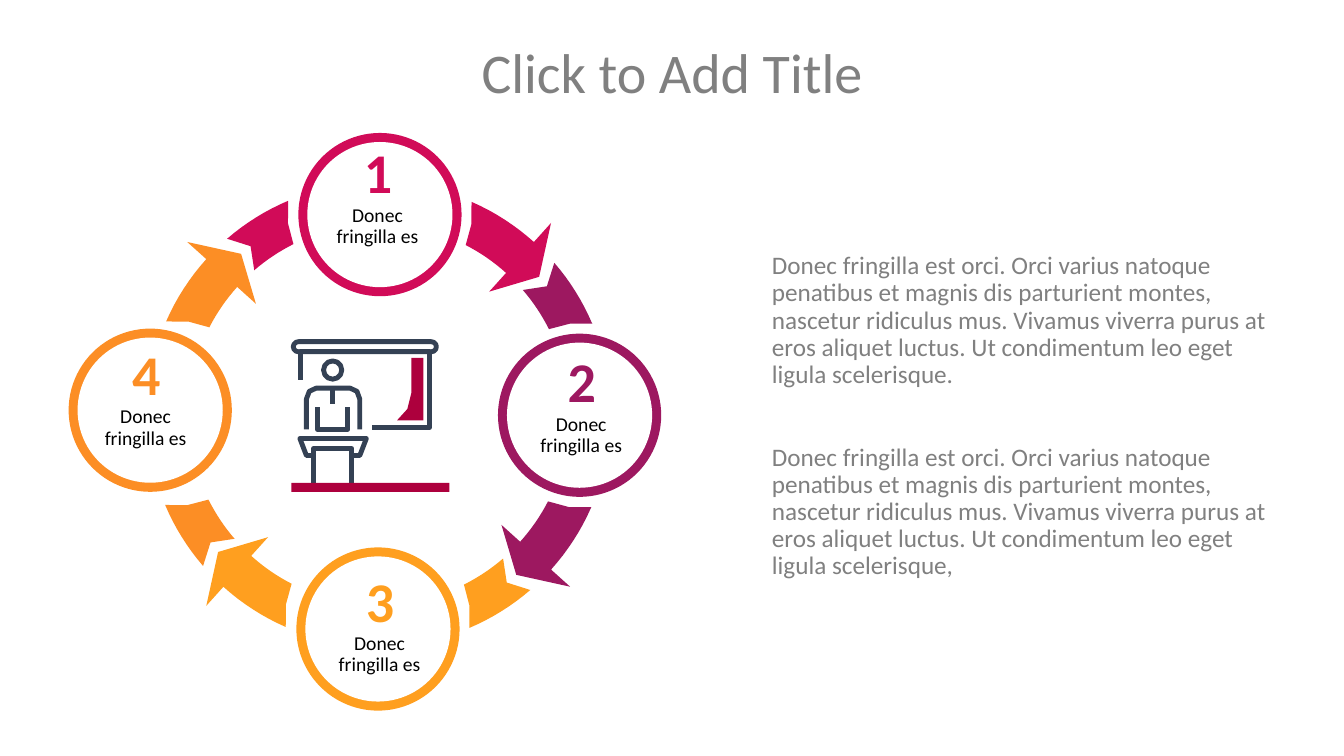
from dataclasses import dataclass
from math import cos, radians, sin
from typing import Optional

from lxml.etree import SubElement
from pptx import Presentation
from pptx.dml.color import RGBColor
from pptx.enum.shapes import MSO_CONNECTOR as Connector, MSO_SHAPE as Preset
from pptx.enum.text import MSO_ANCHOR as Anchor, PP_ALIGN as Align
from pptx.oxml.ns import qn
from pptx.util import Pt

Point = tuple[float, float]


@dataclass(frozen=True)
class Theme:
    font: str = "Calibri"
    grey: str = "808080"
    black: str = "000000"
    white: str = "FFFFFF"
    ink: str = "344154"
    accent: str = "AD003D"
    heading_size: float = 40
    body_size: float = 18
    label_size: float = 14
    icon_line: float = 3.5
    tight: float = 0.9


@dataclass(frozen=True)
class Box:
    left: float
    top: float
    width: float
    height: float

    def lengths(self) -> tuple[Pt, ...]:
        return Pt(self.left), Pt(self.top), Pt(self.width), Pt(self.height)


@dataclass(frozen=True)
class Step:
    color: str
    ring: Point
    caption: Point


@dataclass(frozen=True)
class Band:
    center: Point = (270.5, 296)
    outer: float = 165.7
    middle: float = 151
    inner: float = 136
    barb: float = 33

    def at(self, radius: float, bearing: float) -> Point:
        angle = radians(bearing)
        return self.center[0] + radius * sin(angle), self.center[1] - radius * cos(angle)

    def arc(self, radius: float, start: float, end: float, pieces: int = 8) -> list[Point]:
        return [self.at(radius, start + (end - start) * index / pieces) for index in range(pieces + 1)]

    def head(self, turn: float) -> list[Point]:
        base = turn + 42
        return [*self.arc(self.outer, turn + 23.6, base), self.at(self.middle + self.barb, base),
                self.at(self.middle, turn + 49.4), self.at(self.middle - self.barb, base),
                *self.arc(self.inner, base, turn + 27.2), self.at(self.middle, turn + 26)]

    def tail(self, turn: float) -> list[Point]:
        start = turn + 49.2
        return [*self.arc(self.outer, start, turn + 67), self.at(self.middle, turn + 64.6),
                *self.arc(self.inner, turn + 63.4, start), self.at(self.middle, turn + 52.7)]


THEME = Theme()
BAND = Band()
RING_SIZE, DISC_SIZE = 116.6, 103.7
STEP_LABEL = "Donec fringilla es"
BODY = (
    "Donec fringilla est orci. Orci varius natoque penatibus et magnis dis parturient montes, "
    "nascetur ridiculus mus. Vivamus viverra purus at eros aliquet luctus. "
    "Ut condimentum leo eget ligula scelerisque"
)
STEPS = [
    Step("D10B58", (213.1, 95), (220.3, 95)),
    Step("9D1860", (355.7, 238.3), (365.8, 244.1)),
    Step("FF9F1F", (211.7, 391), (221.8, 401)),
    Step("FC8E25", (49, 234.7), (54.7, 239)),
]
VEST = [(226.8, 290.9), (226.8, 306.7), (248.4, 306.7), (248.4, 290.9)]
SHOULDERS = [(218.9, 306.7), (218.9, 285), (221, 279.5), (226, 277.2),
             (250, 277.2), (255, 279.5), (257, 285), (257, 306.7)]
LECTERN_TOP = [(223.9, 325.4), (218.9, 325.4), (214.2, 313.2), (261.7, 313.2), (257, 325.4), (251.3, 325.4)]
LECTERN_BODY = [(251.3, 347.8), (251.3, 320.4), (223.9, 320.4), (223.9, 347.8)]
BOARD = [(214.6, 271.4), (214.6, 251.3), (306.7, 251.3), (306.7, 305.3), (265.7, 305.3)]
CURTAIN = [(302.4, 255.6), (293.8, 255.6), (293.8, 281), (291, 292.2), (283.7, 300.2), (302.4, 300.2)]


def paint(shape, fill: Optional[str] = None, line: Optional[str] = None) -> None:
    shape.shadow.inherit = False
    if fill:
        shape.fill.solid()
        shape.fill.fore_color.rgb = RGBColor.from_string(fill)
    else:
        shape.fill.background()
    if line:
        shape.line.color.rgb = RGBColor.from_string(line)
        shape.line.width = Pt(THEME.icon_line)
    else:
        shape.line.fill.background()


def draw_outline(shapes, outline: list[Point], fill: Optional[str] = None, line: Optional[str] = None) -> None:
    points = [(Pt(x), Pt(y)) for x, y in outline]
    builder = shapes.build_freeform(*points[0])
    builder.add_line_segments(points[1:], close=fill is not None)
    paint(builder.convert_to_shape(), fill, line)


def draw_preset(shapes, preset: Preset, box: Box, fill: Optional[str] = None, line: Optional[str] = None):
    shape = shapes.add_shape(preset, *box.lengths())
    paint(shape, fill, line)
    return shape


def format_paragraph(paragraph, size: float, color: str, align: Align, spacing: float, bold: bool = False) -> None:
    paragraph.alignment = align
    paragraph.line_spacing = spacing
    for run in paragraph.runs:
        run.font.name, run.font.size, run.font.bold = THEME.font, Pt(size), bold
        run.font.color.rgb = RGBColor.from_string(color)


def draw_text(shapes, box: Box, text: str, size: float, color: str,
              align: Align = Align.CENTER, spacing: float = THEME.tight, bold: bool = False):
    frame = shapes.add_textbox(*box.lengths()).text_frame
    frame.word_wrap = True
    frame.text = text
    for paragraph in frame.paragraphs:
        format_paragraph(paragraph, size, color, align, spacing, bold)
    return frame


def draw_cycle(shapes) -> None:
    ring_shapes = shapes.add_group_shape().shapes
    inset = (RING_SIZE - DISC_SIZE) / 2
    for index, step in enumerate(STEPS):
        draw_outline(ring_shapes, BAND.head(90 * index), fill=step.color)
        draw_outline(ring_shapes, BAND.tail(90 * (index - 1)), fill=step.color)
        left, top = step.ring
        draw_preset(ring_shapes, Preset.OVAL, Box(left, top, RING_SIZE, RING_SIZE), step.color)
        draw_preset(ring_shapes, Preset.OVAL, Box(left + inset, top + inset, DISC_SIZE, DISC_SIZE), THEME.white)
    for number, step in enumerate(STEPS, start=1):
        left, top = step.caption
        draw_text(shapes, Box(left + 2.2, top + 48.2, 94.3, 56.2), STEP_LABEL, THEME.label_size, THEME.black)
        draw_text(shapes, Box(left, top, 99.4, 55.4), str(number), THEME.heading_size, step.color,
                  spacing=1.0, bold=True)


def draw_speaker_icon(shapes) -> None:
    icon_shapes = shapes.add_group_shape().shapes
    draw_preset(icon_shapes, Preset.OVAL, Box(231.1, 257.8, 13, 13), line=THEME.ink)
    tie = icon_shapes.add_connector(Connector.STRAIGHT, Pt(237.6), Pt(277.2), Pt(237.6), Pt(288.7))
    tie.line.color.rgb, tie.line.width = RGBColor.from_string(THEME.ink), Pt(THEME.icon_line)
    SubElement(tie._element.spPr, qn("a:effectLst"))
    for outline in (VEST, SHOULDERS, LECTERN_TOP, LECTERN_BODY, BOARD):
        draw_outline(icon_shapes, outline, line=THEME.ink)
    roller = draw_preset(icon_shapes, Preset.ROUNDED_RECTANGLE, Box(209.5, 244.1, 102.2, 7.2), line=THEME.ink)
    roller.adjustments[0] = 0.5
    draw_outline(icon_shapes, CURTAIN, fill=THEME.accent)
    draw_preset(shapes, Preset.RECTANGLE, Box(208.1, 344.9, 113, 6.5), THEME.accent)


def main() -> None:
    presentation = Presentation()
    presentation.slide_width, presentation.slide_height = Pt(960), Pt(540)
    slide = presentation.slides.add_slide(presentation.slide_layouts[5])
    title = slide.shapes.title
    title.left, title.top, title.width, title.height = Box(66, 28.8, 828, 60.5).lengths()
    title.text_frame.text = "Click to Add Title"
    title.text_frame.vertical_anchor = Anchor.TOP
    format_paragraph(title.text_frame.paragraphs[0], THEME.heading_size, THEME.grey, Align.CENTER, THEME.tight)
    draw_cycle(slide.shapes)
    body = draw_text(slide.shapes, Box(544.3, 177.1, 382.3, 219.6), f"{BODY}.\n{BODY},",
                     THEME.body_size, THEME.grey, Align.LEFT)
    body.paragraphs[1].space_before = Pt(39.5)
    draw_speaker_icon(slide.shapes)
    presentation.save("out.pptx")


if __name__ == "__main__":
    main()
